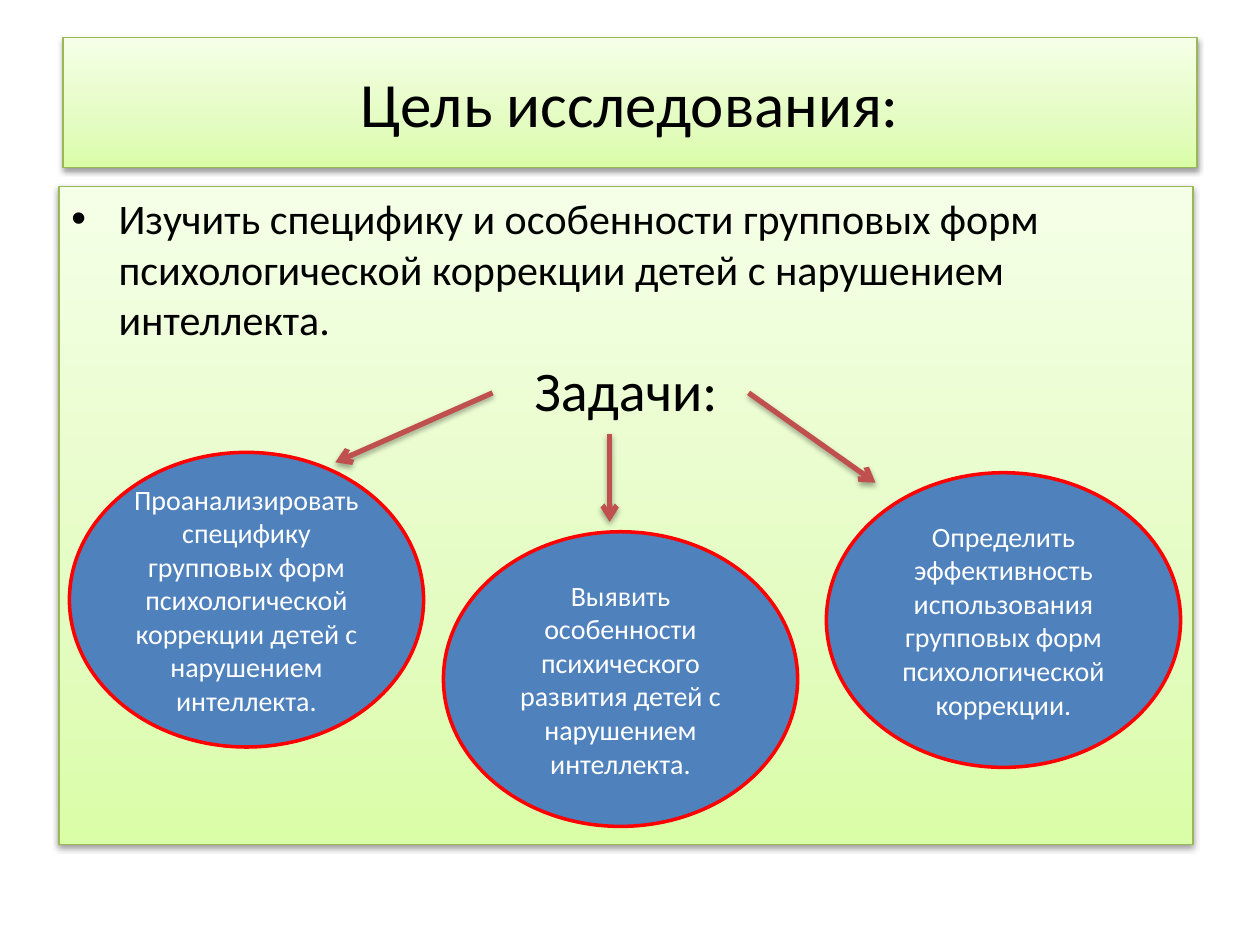
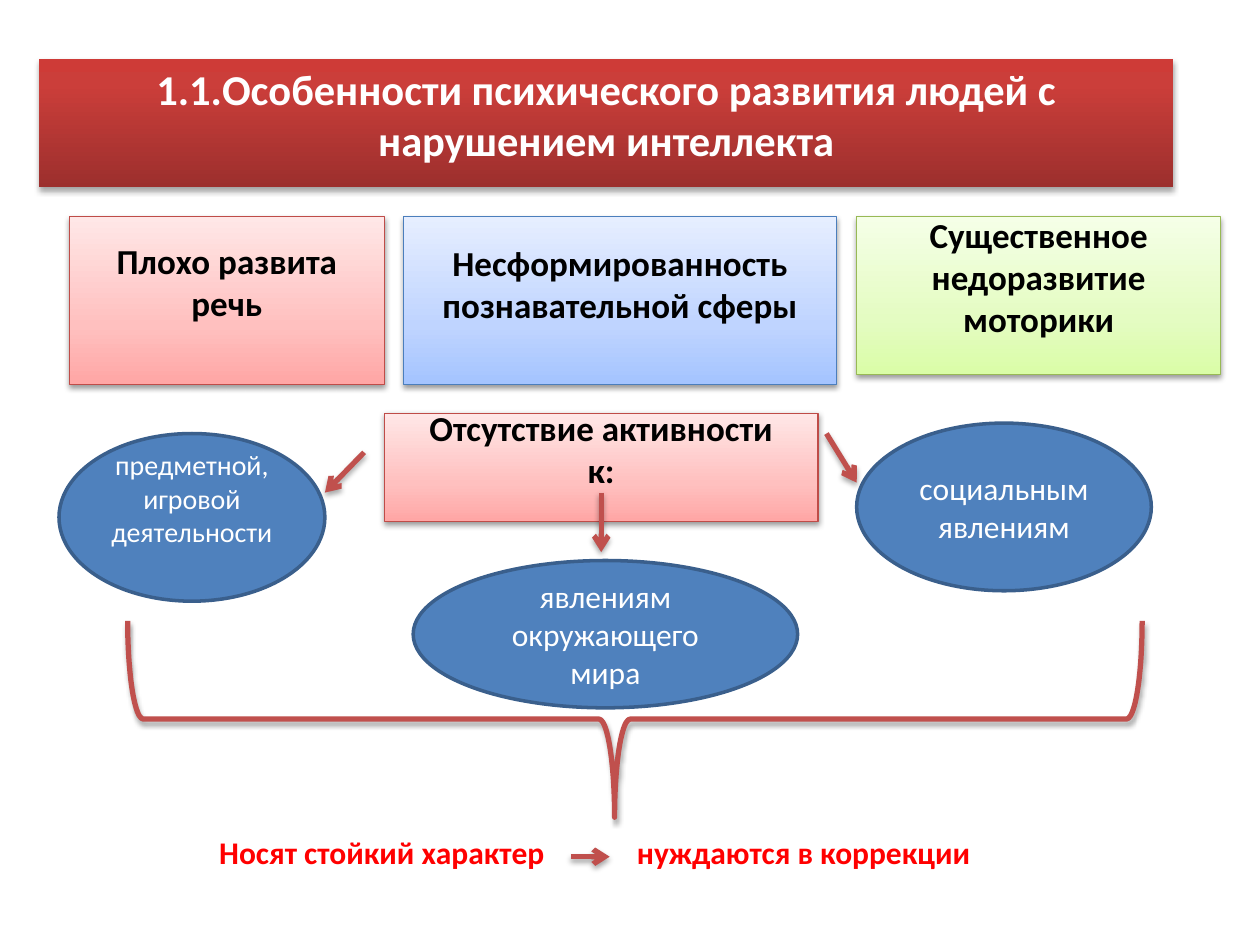
from dataclasses import dataclass

from lxml.etree import SubElement
from pptx import Presentation
from pptx.dml.color import RGBColor
from pptx.enum.shapes import MSO_CONNECTOR as Connector, MSO_SHAPE as Shape
from pptx.enum.text import MSO_ANCHOR as Anchor, MSO_AUTO_SIZE as AutoSize, PP_ALIGN as Align
from pptx.oxml.ns import qn
from pptx.util import Cm, Pt


@dataclass(frozen=True)
class Gradient:
    """Stops run from the bottom edge up; no outline means no line."""
    stops: tuple
    outline: str = None
    shadow: tuple = (38, 20000)


@dataclass(frozen=True)
class Theme:
    font: str = "Calibri"
    black: str = "000000"
    white: str = "FFFFFF"
    red: str = "FF0000"
    blue: str = "4F81BD"
    navy: str = "3A5F8C"
    brick: str = "C0504D"
    green_panel: Gradient = Gradient(((0, "DAFDA7"), (35, "E4FCC2"), (100, "F5FFE7")), "98B955")
    blue_panel: Gradient = Gradient(((0, "A4C4FF"), (35, "BFD4FF"), (100, "E6EEFF")), "4B7EBC")
    pink_panel: Gradient = Gradient(((0, "FFA6A5"), (35, "FFC0BF"), (100, "FFE7E7")), "BF4C48")
    red_panel: Gradient = Gradient(((0, "9C2F2D"), (80, "CB3E3A"), (100, "CE3B37")),
                                   shadow=(35, 23000))
    accent_shadow: tuple = (35, 23000)
    title: float = 36
    section: float = 24.3
    tasks: float = 32
    goal: float = 24
    heading: float = 20
    label: float = 18
    small: float = 16
    hairline: float = 0.75
    outline: float = 2
    stroke: float = 3


class SlideBuilder:
    def __init__(self, theme):
        self.theme = theme
        self.deck = Presentation()
        self.deck.slide_width, self.deck.slide_height = Cm(25.4), Cm(19.05)
        self.page = None

    def new_page(self):
        self.page = self.deck.slides.add_slide(self.deck.slide_layouts[5])

    def add_shadow(self, element, strength):
        opacity, distance = strength
        effects = SubElement(element.spPr, qn("a:effectLst"))
        outer = SubElement(effects, qn("a:outerShdw"), blurRad="40000", dist=str(distance),
                           dir="5400000", rotWithShape="0")
        color = SubElement(outer, qn("a:srgbClr"), val=self.theme.black)
        SubElement(color, qn("a:alpha"), val=str(opacity * 1000))

    def set_line(self, line, color, width):
        line.color.rgb = RGBColor.from_string(color)
        line.width = Pt(width)

    def paint_panel(self, box, gradient):
        box.fill.gradient()
        box.fill.gradient_angle = 90
        stop_list = next(box._element.spPr.iter(qn("a:gsLst")))
        for stop in list(stop_list):
            stop_list.remove(stop)
        for position, color in gradient.stops:
            stop = SubElement(stop_list, qn("a:gs"), pos=str(position * 1000))
            SubElement(stop, qn("a:srgbClr"), val=color)
        if gradient.outline:
            self.set_line(box.line, gradient.outline, self.theme.hairline)
        else:
            box.line.fill.background()
        self.add_shadow(box._element, gradient.shadow)

    def set_text(self, box, lines, size, color, bold=False, align=Align.CENTER,
                 anchor=Anchor.MIDDLE, lift=0):
        """Fill the box with lines; lift is extra room kept free below them."""
        frame = box.text_frame
        settings = {"word_wrap": True, "auto_size": AutoSize.NONE, "vertical_anchor": anchor,
                    "margin_bottom": Cm(0.13 + lift)}
        for name, value in settings.items():
            setattr(frame, name, value)
        frame.text = "\n".join(lines)
        for para in frame.paragraphs:
            para.alignment = align
            for span in para.runs:
                self.format_span(span, size, color, bold)
        return frame.paragraphs

    def format_span(self, span, size, color, bold=False):
        values = {"name": self.theme.font, "size": Pt(size), "bold": bold}
        for name, value in values.items():
            setattr(span.font, name, value)
        span.font.color.rgb = RGBColor.from_string(color)

    def title(self, text, place, gradient, size, color, **style):
        box = self.page.shapes.title
        for name, value in zip(("left", "top", "width", "height"), place):
            setattr(box, name, Cm(value))
        self.paint_panel(box, gradient)
        self.set_text(box, [text], size, color, **style)

    def panel(self, lines, place, gradient, size, **style):
        box = self.page.shapes.add_shape(Shape.RECTANGLE, *map(Cm, place))
        self.paint_panel(box, gradient)
        return self.set_text(box, lines, size, self.theme.black, **style)

    def ellipse(self, text, place, outline, size, **style):
        box = self.page.shapes.add_shape(Shape.OVAL, *map(Cm, place))
        box.shadow.inherit = False
        box.fill.solid()
        box.fill.fore_color.rgb = RGBColor.from_string(self.theme.blue)
        self.set_line(box.line, outline, self.theme.outline)
        self.set_text(box, [text], size, self.theme.white, **style)

    def arrow(self, *ends):
        arrow = self.page.shapes.add_connector(Connector.STRAIGHT, *map(Cm, ends))
        self.set_line(arrow.line, self.theme.brick, self.theme.stroke)
        outline = arrow._element.spPr.find(qn("a:ln"))
        SubElement(outline, qn("a:tailEnd"), type="arrow")
        self.add_shadow(arrow._element, self.theme.accent_shadow)

    def bottom_brace(self, place):
        brace = self.page.shapes.add_shape(Shape.LEFT_BRACE, *map(Cm, place))
        brace.rotation = 270
        brace.adjustments[0], brace.adjustments[1] = 0.08, 0.48
        brace.fill.background()
        self.set_line(brace.line, self.theme.brick, self.theme.stroke)
        self.add_shadow(brace._element, self.theme.accent_shadow)

    def tabbed_text(self, parts, place, tab):
        box = self.page.shapes.add_textbox(*map(Cm, place))
        para, = self.set_text(box, ["\t".join(parts)], self.theme.label, self.theme.red,
                              bold=True, align=Align.LEFT, anchor=Anchor.TOP)
        tabs = SubElement(para._p.get_or_add_pPr(), qn("a:tabLst"))
        SubElement(tabs, qn("a:tab"), pos=str(Cm(tab)), algn="l")

    def bullet(self, para, indent):
        props = para._p.get_or_add_pPr()
        props.set("marL", str(Cm(indent)))
        props.set("indent", str(-Cm(indent)))
        SubElement(props, qn("a:buFont"), typeface="Arial")
        SubElement(props, qn("a:buChar"), char="•")


def build_goal(slides):
    theme = slides.theme
    slides.new_page()
    slides.title("Цель исследования:", (1.27, 0.76, 22.86, 2.62), theme.green_panel,
                 theme.title, theme.black)
    goal, tasks = slides.panel(
        ["Изучить специфику и особенности групповых форм психологической коррекции детей "
         "с нарушением интеллекта.", "Задачи:"],
        (1.19, 3.76, 22.86, 13.26), theme.green_panel, theme.goal, anchor=Anchor.TOP)
    goal.alignment = Align.LEFT
    slides.format_span(tasks.runs[0], theme.tasks, theme.black)
    for para, size in ((goal, theme.goal), (tasks, theme.tasks)):
        para.space_before = Pt(size * 0.2)
    slides.bullet(goal, 0.95)

    for ends in ((9.93, 7.92, 6.76, 9.32), (12.29, 8.74, 12.29, 10.52),
                 (15.09, 7.92, 17.65, 9.73)):
        slides.arrow(*ends)
    for left, top, task in (
            (1.4, 9.12, "Проанализировать специфику групповых форм психологической "
                        "коррекции детей с нарушением интеллекта."),
            (16.66, 9.53, "Определить эффективность использования групповых форм "
                          "психологической коррекции."),
            (8.94, 10.72, "Выявить особенности психического развития детей "
                          "с нарушением интеллекта.")):
        slides.ellipse(task, (left, top, 7.14, 5.94), theme.red, theme.small)


def build_features(slides):
    theme = slides.theme
    slides.new_page()
    slides.title("1.1.Особенности психического развития людей с нарушением интеллекта",
                 (0.79, 1.19, 22.86, 2.59), theme.red_panel, theme.section, theme.white,
                 bold=True, lift=0.38)
    for lines, place, gradient, lift in (
            (["Несформированность познавательной сферы"], (8.13, 4.37, 8.74, 3.38),
             theme.blue_panel, 0.69),
            (["Плохо развита речь"], (1.4, 4.37, 6.35, 3.38), theme.pink_panel, 0.77),
            (["Существенное недоразвитие моторики"], (17.27, 4.37, 7.34, 3.18),
             theme.green_panel, 0.77),
            (["Отсутствие активности", "к:"], (7.75, 8.33, 8.74, 2.18),
             theme.pink_panel, 0.77)):
        slides.panel(lines, place, gradient, theme.heading, bold=True, lift=lift)

    for text, place, size, lift in (
            ("предметной, игровой деятельности", (1.19, 8.74, 5.36, 3.38), theme.small, 0.77),
            ("явлениям окружающего мира", (8.33, 11.3, 7.75, 2.97), theme.label, 0),
            ("социальным явлениям", (17.27, 8.53, 5.94, 3.38), theme.label, 0)):
        slides.ellipse(text, place, theme.navy, size, lift=lift)

    slides.bottom_brace((10.82, 4.27, 3.96, 20.45))
    slides.tabbed_text(["Носят стойкий характер", "нуждаются в коррекции"],
                       (4.17, 16.66, 17.07, 1.02), 8.42)
    for ends in ((16.66, 8.74, 17.27, 9.73), (7.34, 9.12, 6.55, 9.93),
                 (12.12, 9.93, 12.12, 11.13), (11.51, 17.27, 12.29, 17.27)):
        slides.arrow(*ends)


def main():
    slides = SlideBuilder(Theme())
    build_goal(slides)
    build_features(slides)
    slides.deck.save("out.pptx")


if __name__ == "__main__":
    main()
